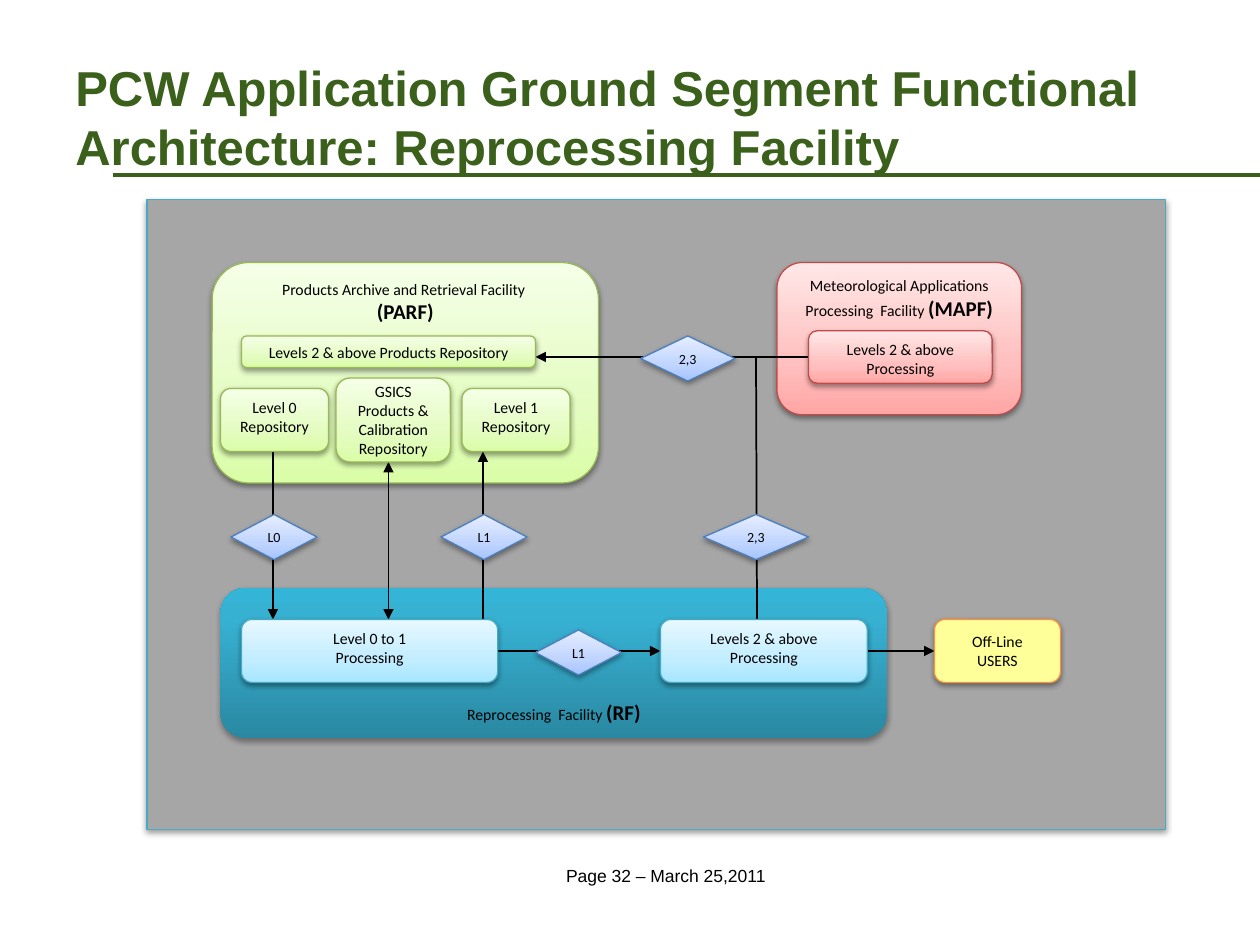
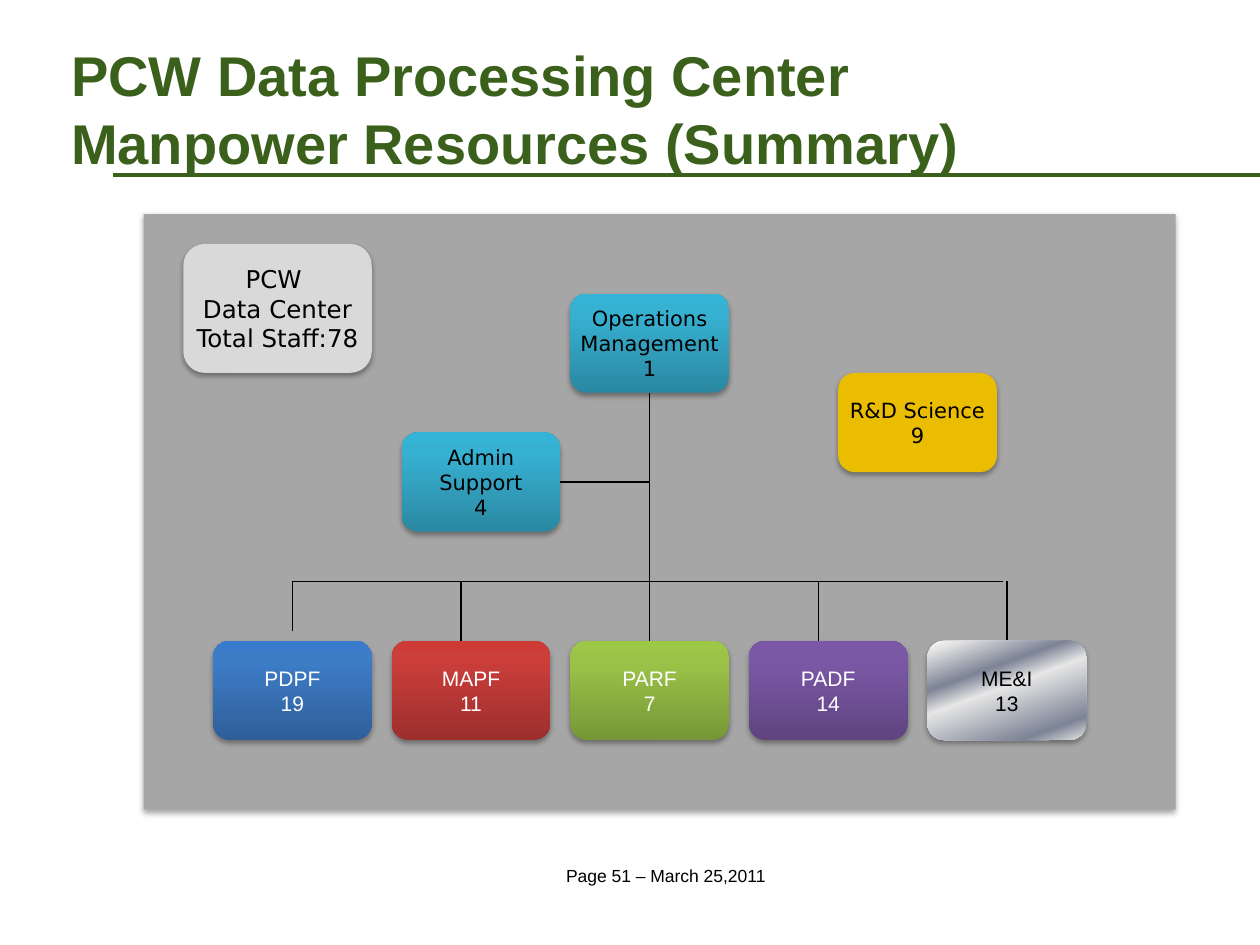
from dataclasses import dataclass

from pptx import Presentation
from pptx import util as u
from pptx.dml.color import RGBColor
from pptx.enum import shapes, text
from pptx.oxml import parse_xml
from pptx.oxml.ns import nsdecls, qn

SHAPE, ANCHOR, ALIGN = shapes.MSO_SHAPE, text.MSO_ANCHOR, text.PP_ALIGN


@dataclass(frozen=True)
class Theme:
    green: str = "3A601B"
    panel: str = "A6A6A6"
    black: str = "000000"
    white: str = "FFFFFF"
    cyan: str = "46AAC5"
    grey: str = "D9D9D9"
    gold: str = "EABD00"
    yellow: str = "FFFF99"
    orange: str = "F69240"
    head: str = "Arial"
    flow: str = "Calibri"
    chart: str = "DejaVu Sans"
    footer: int = 10
    label: int = 9
    strong: int = 12
    gate: int = 8
    role: int = 12
    total: int = 14
    hairline: float = 0.75
    arrow: float = 1
    rule: float = 2.25


T = Theme()


def pale(*colors):
    return list(zip((0, 35, 100), colors))


def deep(*colors):
    return list(zip((0, 80, 100), colors))


# Each look is a fill and a line colour
LIME = dict(fill=pale("DAFDA7", "E4FCC2", "F5FFE7"), line="98B955")
ROSE = dict(fill=pale("FFA6A5", "FFC0BF", "FFE7E7"), line="BF4C48")
SKY = dict(fill=pale("A7E6FF", "C1EDFF", "E7F8FF"), line=T.cyan)
BLUE = dict(fill=pale("A4C4FF", "BFD4FF", "E6EEFF"), line="4B7EBC")
TEAL = dict(fill=deep("2A88A2", "37B1D2", "34B4D6"))
STEEL = dict(fill=list(zip((0, 7, 32, 47, 85, 100),
                           ("FFFFFF", "E6E6E6", "7D8496", "E6E6E6", "7D8496", "E6E6E6"))),
             angle=70)


def assign(obj, **values):
    for name, value in values.items():
        setattr(obj, name, value)


def write(tf, lines, size, font, color=T.black, bold=False, align=ALIGN.CENTER, **frame):
    """Fill a frame with one paragraph a line; what follows a bar is strong."""
    assign(tf, **{"word_wrap": True, **frame})
    for i, line in enumerate(lines):
        p = tf.paragraphs[0] if i == 0 else tf.add_paragraph()
        p.alignment = align
        plain, _, strong = line.partition("|")
        for part, pt, heavy in ((plain, size, bold), (strong, T.strong, True)):
            if part:
                r = p.add_run()
                r.text = part
                assign(r.font, size=u.Pt(pt), name=font, bold=heavy)
                r.font.color.rgb = RGBColor.from_string(color)


def paint(sp, fill, line=None, angle=270):
    """Give a shape a flat or gradient fill, an outline and a soft shadow."""
    sp_pr = sp._element.spPr
    if isinstance(fill, str):
        sp.fill.solid()
        sp.fill.fore_color.rgb = RGBColor.from_string(fill)
    else:
        stops = "".join(f'<a:gs pos="{pos * 1000}"><a:srgbClr val="{c}"/></a:gs>'
                        for pos, c in fill)
        sp.fill.background()
        sp_pr.replace(sp_pr.find(qn("a:noFill")), parse_xml(
            f'<a:gradFill {nsdecls("a")} rotWithShape="1"><a:gsLst>{stops}</a:gsLst>'
            f'<a:lin ang="{angle * 60000}" scaled="0"/></a:gradFill>'))
    if line:
        sp.line.color.rgb = RGBColor.from_string(line)
        sp.line.width = u.Pt(T.hairline)
    else:
        sp.line.fill.background()
    sp.shadow.inherit = False
    alpha, dist = (38, 20000) if line else (35, 23000)
    sp_pr.find(qn("a:effectLst")).append(parse_xml(
        f'<a:outerShdw {nsdecls("a")} blurRad="40000" dist="{dist}" dir="5400000" '
        f'rotWithShape="0"><a:srgbClr val="{T.black}"><a:alpha val="{alpha * 1000}"/>'
        '</a:srgbClr></a:outerShdw>'))


class Grid:
    """Square cells, in inches, counted from a corner on the slide."""

    def __init__(self, s, cell, left=0, top=0):
        self.shapes, self.cell, self.left, self.top = s.shapes, cell, left, top

    def place(self, x, y):
        return u.Inches(self.left + x * self.cell), u.Inches(self.top + y * self.cell)

    def frame(self, x, y, w, h):
        return *self.place(x, y), u.Inches(w * self.cell), u.Inches(h * self.cell)

    def box(self, at, look, lines=(), kind=SHAPE.ROUNDED_RECTANGLE, **style):
        sp = self.shapes.add_shape(kind, *self.frame(*at))
        paint(sp, **look)
        if lines:
            write(sp.text_frame, lines, **style)

    def label(self, at, lines, **style):
        write(self.shapes.add_textbox(*self.frame(*at)).text_frame, lines, **style)

    def line(self, start, end, width, color=T.black, heads=()):
        c = self.shapes.add_connector(shapes.MSO_CONNECTOR.STRAIGHT,
                                      *self.place(*start), *self.place(*end))
        c.line.color.rgb = RGBColor.from_string(color)
        c.line.width = u.Pt(width)
        sp_pr = c._element.spPr
        for head in heads:
            sp_pr.find(qn("a:ln")).append(
                parse_xml(f'<a:{head} {nsdecls("a")} type="triangle"/>'))
        sp_pr.append(parse_xml(f'<a:effectLst {nsdecls("a")}/>'))


def add_page(prs, number, title, size, corner):
    """Add a slide with its title, rule and footer, on twelve cells an inch."""
    s = prs.slides.add_slide(prs.slide_layouts[6])
    page = Grid(s, 1 / 12)
    page.label((10, 81.8, 106.8, 3.2), [f"Page {number} – March 25,2011"],
               size=T.footer, font=T.head)
    page.line((10.8, 16.7), (120, 16.7), T.rule, T.green)
    page.label((*corner, 108, 15), title, size=size, font=T.head, color=T.green,
               bold=True, align=ALIGN.LEFT, vertical_anchor=ANCHOR.MIDDLE)
    return s


def draw_facilities(g):
    """Draw the archive, applications and reprocessing containers."""
    for at, look, lines, anchor in (
        ((7, 37, 63.5, 14.3), TEAL, ["Reprocessing  Facility |(RF)"], ANCHOR.BOTTOM),
        ((60, 6, 23.3, 14.5), ROSE,
         ["Meteorological Applications", "Processing  Facility |(MAPF)"], ANCHOR.TOP),
        ((6.2, 6, 36.8, 21), LIME,
         ["Products Archive and Retrieval Facility ", "|(PARF)"], ANCHOR.TOP),
    ):
        g.box(at, look, lines, size=T.label, font=T.flow, vertical_anchor=anchor)


def draw_flows(g):
    for start, end, *heads in (
        ((70, 15), (37, 15), "tailEnd"),
        ((12, 24), (12, 40), "tailEnd"),
        ((23, 40), (23, 25), "headEnd", "tailEnd"),
        ((32, 40), (32, 24), "tailEnd"),
        ((33, 43), (48.9, 43), "tailEnd"),
        ((68, 43), (75, 43), "tailEnd"),
        ((58.1, 40), (58, 15)),
    ):
        g.line(start, end, T.arrow, heads=heads)


def draw_functions(g):
    """Draw the repositories, processors and users."""
    processing = ["Levels 2 & above Processing"]
    top, middle = ANCHOR.TOP, ANCHOR.MIDDLE
    for at, look, lines, anchor in (
        ((9, 13, 28, 3), LIME, ["Levels 2 & above Products Repository"], middle),
        ((7, 18, 10.3, 6), LIME, ["Level 0", "Repository"], top),
        ((18, 17, 10.9, 8), LIME, ["GSICS Products &", "Calibration", "Repository"], middle),
        ((30, 18, 10.3, 6), LIME, ["Level 1", "Repository"], top),
        ((63, 12.5, 17.5, 5), ROSE, processing, top),
        ((9, 40, 24.4, 6), SKY, ["Level 0 to 1", "Processing"], top),
        ((48.9, 40, 19.7, 6), SKY, processing, top),
        ((75, 40, 12, 6), dict(fill=T.yellow, line=T.orange), ["Off-Line", "USERS"], middle),
    ):
        g.box(at, look, lines, size=T.label, font=T.flow, vertical_anchor=anchor)


def draw_gates(g):
    """Draw the decision marks that name the data level on a flow."""
    for x, y, w, name in ((8, 30, 8.2, "L0"), (28, 30, 8.2, "L1"), (53, 30, 10, "2,3"),
                          (37, 41, 8.2, "L1"), (47, 13, 9, "2,3")):
        g.box((x, y, w, 4.3), BLUE, [name], SHAPE.FLOWCHART_DECISION,
              size=T.gate, font=T.flow, vertical_anchor=ANCHOR.MIDDLE)


def architecture(prs):
    s = add_page(prs, 32, ["PCW Application Ground Segment Functional "
                           "Architecture: Reprocessing Facility"], 28, (6, 3.6))
    g = Grid(s, 1 / 12, 14 / 12, 19 / 12)
    g.box((0, 0, 97, 60), dict(fill=T.panel, line=T.cyan), kind=SHAPE.RECTANGLE)
    for draw in (draw_facilities, draw_flows, draw_functions, draw_gates):
        draw(g)


def draw_reporting_lines(g):
    bus, row = 18.5, 21.5
    g.line((7.5, bus), (43.3, bus), T.hairline)
    for x, start, end in ((7.5, bus, 21), (16, bus, row), (25.5, 9, row),
                          (34, bus, row), (43.5, bus, row)):
        g.line((x, start), (x, end), T.hairline)
    g.line((21, 13.5), (25.5, 13.5), T.hairline)


def draw_management(g):
    gold = dict(fill=T.gold)
    style = dict(font=T.chart, vertical_anchor=ANCHOR.MIDDLE, word_wrap=False)
    flush = dict.fromkeys(("margin_left", "margin_top", "margin_right", "margin_bottom"), 0)
    g.box((2, 1.5, 9.5, 6.5), dict(fill=T.grey),
          ["PCW ", "Data Center", "Total Staff:78"], size=T.total, **style)
    for x, y, look, lines in ((21.5, 4, TEAL, ["Operations", "Management", "1"]),
                              (13, 11, TEAL, ["Admin", "Support", "4"]),
                              (35, 8, gold, ["R&D Science", "9"])):
        g.box((x, y, 8, 5), look, lines, size=T.role, **style, **flush)


def draw_teams(g):
    teams = (
        ("PDPF", 19, dict(fill=deep("2F5F99", "3D7CC7", "3A7CCB")), T.white),
        ("MAPF", 11, dict(fill=deep("9C2F2D", "CB3E3A", "CE3B37")), T.white),
        ("PARF", 7, dict(fill=deep("779737", "9BC348", "9DC746")), T.white),
        ("PADF", 14, dict(fill=deep("5F4480", "7B58A6", "7C57A8")), T.white),
        ("ME&I", 13, STEEL, T.black),
    )
    for i, (name, staff, look, color) in enumerate(teams):
        g.box((3.5 + 9 * i, 21.5, 8, 5), look, [name, str(staff)], size=T.role,
              font=T.head, color=color, vertical_anchor=ANCHOR.MIDDLE)


def manpower(prs):
    s = add_page(prs, 51, ["PCW Data Processing Center", "Manpower Resources (Summary)"],
                 32, (5.6, 2.8))
    g = Grid(s, 0.1575, 1.14, 1.7)
    g.box((0, 0, 52, 30), dict(fill=T.panel), kind=SHAPE.RECTANGLE)
    for draw in (draw_reporting_lines, draw_management, draw_teams):
        draw(g)


def main():
    prs = Presentation()
    assign(prs, slide_width=u.Inches(10), slide_height=u.Inches(7.5))
    architecture(prs)
    manpower(prs)
    prs.save("out.pptx")


if __name__ == "__main__":
    main()
